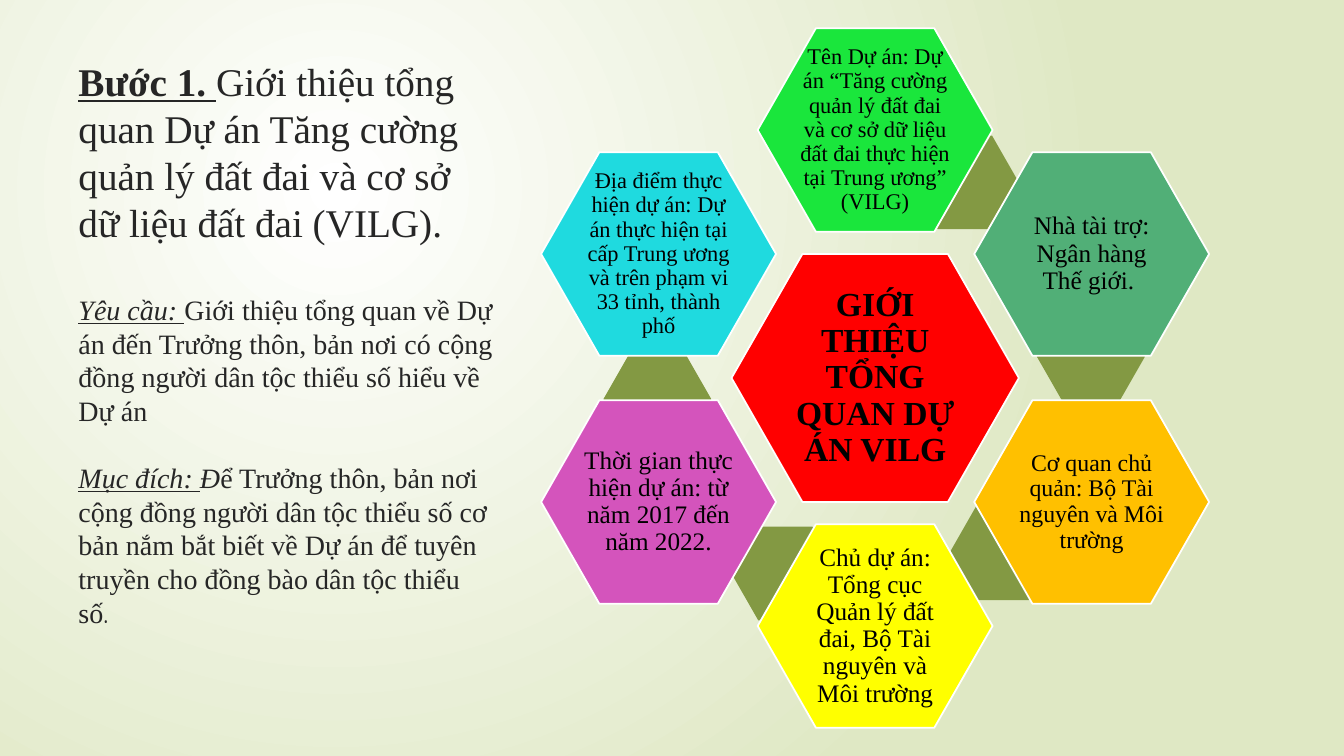
from math import cos, radians, sin

from lxml.etree import SubElement
from pptx import Presentation
from pptx.dml.color import RGBColor
from pptx.enum.shapes import MSO_SHAPE
from pptx.enum.text import MSO_ANCHOR, PP_ALIGN
from pptx.oxml.ns import qn
from pptx.util import Inches, Pt

COLORS = {
    "white": "FFFFFF", "pale": "DFE8C4", "ink": "262626", "black": "000000",
    "olive": "839943", "red": "FF0000", "green": "1AE63C", "sage": "51AF77",
    "amber": "FFC000", "yellow": "FFFF00", "pink": "D454BC", "cyan": "1FDADF",
}
FONT = "Times New Roman"

HUB = (8.68, 3.75)
RADIUS = (2.48, 2.46)
TOPICS = [  # clockwise from the top: colour, text size, text
    ("green", 16, "Tên Dự án: Dự án “Tăng cường quản lý đất đai và cơ sở dữ liệu "
                  "đất đai thực hiện tại Trung ương” (VILG)"),
    ("sage", 18, "Nhà tài trợ: Ngân hàng Thế giới. "),
    ("amber", 17, "Cơ quan chủ quản: Bộ Tài nguyên và Môi trường"),
    ("yellow", 18, "Chủ dự án: Tổng cục Quản lý đất đai, Bộ Tài nguyên và Môi trường"),
    ("pink", 18, "Thời gian thực hiện dự án: từ năm 2017 đến năm 2022."),
    ("cyan", 16, "Địa điểm thực hiện dự án: Dự án thực hiện tại cấp Trung ương "
                 "và trên phạm vi 33 tỉnh, thành phố"),
]
# Centre of the link hexagon drawn beneath each topic but the last
LINKS = [(9.57, 1.81), (10.82, 3.54), (9.95, 5.49), (7.79, 5.69), (6.52, 3.96)]

INTRO = [  # size, space before, runs
    (28, 0, [
        ("Bước 1. ", {"bold": True, "line": True}),
        ("Giới thiệu tổng quan Dự án Tăng cường quản lý đất đai và cơ sở "
         "dữ liệu đất đai (VILG).", {})]),
    (20, 33.5, [
        ("Yêu cầu: ", {"italic": True, "line": True}),
        ("Giới thiệu tổng quan về Dự án đến Trưởng thôn, bản nơi có cộng đồng "
         "người dân tộc thiểu số hiểu về Dự án", {})]),
    (20, 24, [
        ("Mục đích: ", {"italic": True, "line": True}),
        ("Đ", {"italic": True}),
        ("ể Trưởng thôn, bản nơi cộng đồng người dân tộc thiểu số cơ bản nắm "
         "bắt biết về Dự án để tuyên truyền cho đồng bào dân tộc thiểu số", {}),
        (".", {"font": "Quicksand"})]),
]


def rgb(name):
    return RGBColor.from_string(COLORS[name])


def write(para, text, size, color="black", font=FONT, bold=False, italic=False,
          line=False):
    run = para.add_run()
    run.text = text
    face = run.font
    face.name, face.size = font, Pt(size)
    face.bold, face.italic, face.underline = bold, italic, line
    face.color.rgb = rgb(color)


class Deck:
    def __init__(self):
        self.prs = Presentation()
        self.prs.slide_width = Inches(13.33)
        self.prs.slide_height = Inches(7.5)
        self.slide = self.prs.slides.add_slide(self.prs.slide_layouts[6])

    def glow(self, inner, outer):
        """Fill the background with a circular gradient."""
        fill = self.slide.background.fill
        fill.gradient()
        for stop, name in zip(fill.gradient_stops, (inner, outer)):
            stop.color.rgb = rgb(name)
        grad = self.slide.background._cSld.find(".//" + qn("a:gradFill"))
        grad.remove(grad.find(qn("a:lin")))
        for stop, pos in zip(grad.iter(qn("a:gs")), ("0", "100000")):
            stop.set("pos", pos)
        ring = SubElement(grad, qn("a:path"), path="circle")
        SubElement(ring, qn("a:fillToRect"), l="50000", t="50000",
                   r="100000", b="100000")

    def hexagon(self, mid, size, color, edge=None):
        (x, y), (w, h) = mid, size
        hexa = self.slide.shapes.add_shape(
            MSO_SHAPE.HEXAGON, Inches(x - w / 2), Inches(y - h / 2),
            Inches(w), Inches(h))
        hexa.adjustments[0] = 0.286
        hexa.shadow.inherit = False
        hexa.fill.solid()
        hexa.fill.fore_color.rgb = rgb(color)
        if edge:
            hexa.line.color.rgb = rgb(edge)
            hexa.line.width = Pt(1.25)
        else:
            hexa.line.fill.background()
        return hexa

    def label(self, mid, size, color, text, points, bold=False):
        """Draw a white-edged hexagon with centred text."""
        frame = self.hexagon(mid, size, color, "white").text_frame
        frame.word_wrap = True
        frame.vertical_anchor = MSO_ANCHOR.MIDDLE
        frame.margin_left = frame.margin_right = Inches(0.03)
        frame.margin_top = frame.margin_bottom = Inches(0.03)
        para = frame.paragraphs[0]
        para.alignment = PP_ALIGN.CENTER
        para.line_spacing = 0.9
        write(para, text, points, bold=bold)

    def prose(self, x, y, w, h, blocks):
        box = self.slide.shapes.add_textbox(
            Inches(x), Inches(y), Inches(w), Inches(h))
        frame = box.text_frame
        frame.word_wrap = True
        for i, (size, gap, runs) in enumerate(blocks):
            para = frame.add_paragraph() if i else frame.paragraphs[0]
            para.space_before = Pt(gap)
            for text, style in runs:
                write(para, text, size, "ink", **style)


def main():
    deck = Deck()
    deck.glow("white", "pale")
    deck.label(HUB, (2.85, 2.46), "red", "GIỚI THIỆU TỔNG QUAN DỰ ÁN VILG", 24,
               bold=True)
    for i, (color, points, text) in enumerate(TOPICS):
        if i < len(LINKS):
            deck.hexagon(LINKS[i], (1.07, 0.93), "olive")
        turn = radians(60 * i)
        mid = (HUB[0] + RADIUS[0] * sin(turn), HUB[1] - RADIUS[1] * cos(turn))
        deck.label(mid, (2.33, 2.02), color, text, points)
    deck.prose(0.68, 0.52, 4.34, 6.77, INTRO)
    deck.prs.save("out.pptx")


if __name__ == "__main__":
    main()
